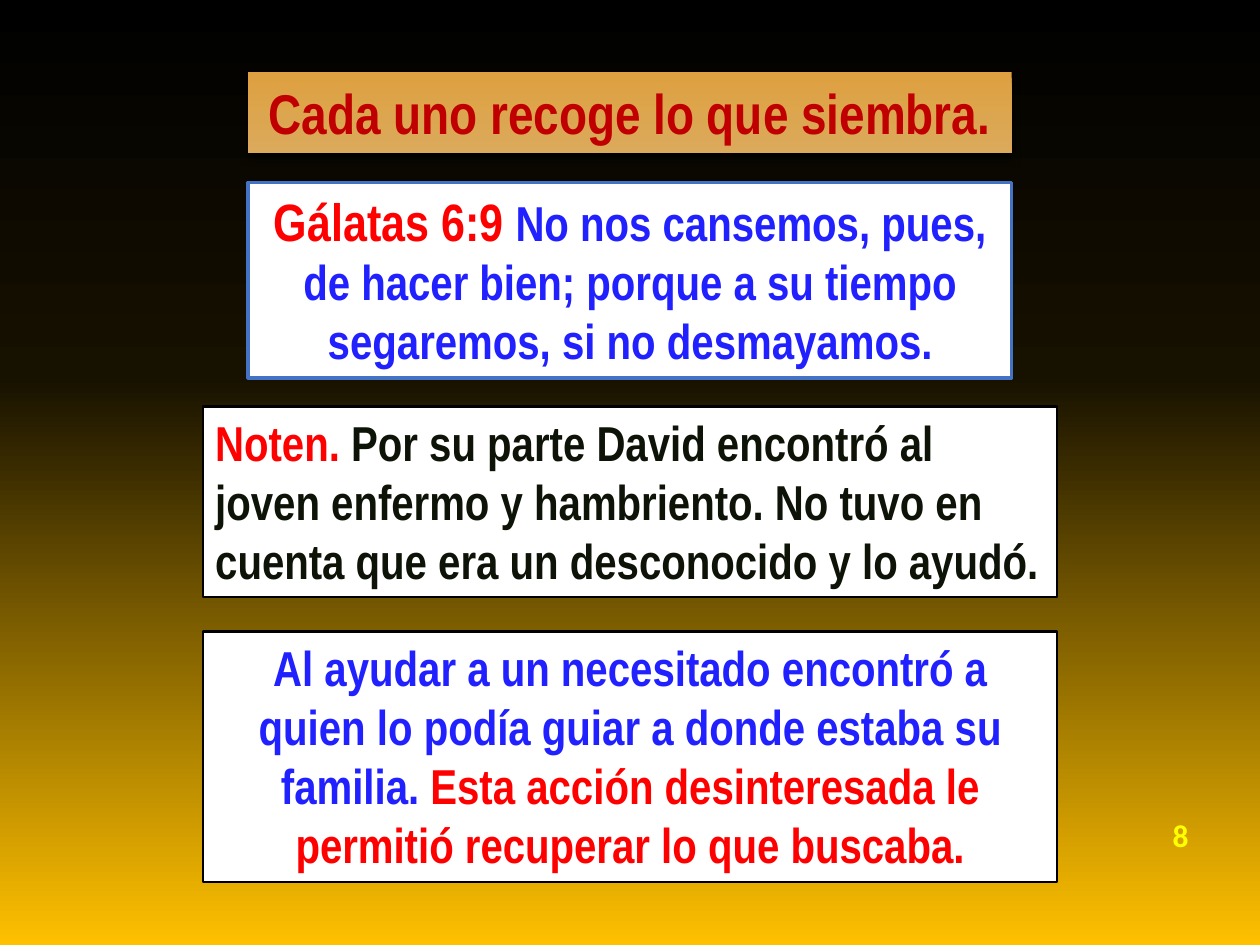
import copy
from dataclasses import dataclass

import pptx
import pptx.util
from lxml import etree
from pptx.dml.color import RGBColor
from pptx.enum.shapes import MSO_SHAPE
from pptx.enum.text import MSO_ANCHOR, MSO_AUTO_SIZE, PP_ALIGN
from pptx.oxml.ns import qn
from pptx.util import Cm, Pt


@dataclass(frozen=True)
class Theme:
    font: str = "Arial Narrow"
    number_font: str = "Calibri"
    title_size: int = 32
    verse_size: int = 30
    body_size: int = 28
    number_size: int = 18
    red: str = "FF0000"
    dark_red: str = "C00000"
    blue: str = "2121FF"
    ink: str = "0E1307"
    navy: str = "002060"
    yellow: str = "FFFF00"
    white: str = "FFFFFF"
    black: str = "000000"
    frame_blue: str = "4472C4"
    backdrop: tuple = ((0, "000000"), (0.4, "171100"), (1, "FFC000"))
    banner: tuple = ((0, "DEA040"), (1, "DBAA5B"))


THEME = Theme()
SLIDE_WIDTH, SLIDE_HEIGHT = 25.4, 19.05


def centred(top, width, height):
    """Box in cm, centred across the slide."""
    return (SLIDE_WIDTH - width) / 2, top, width, height


def add_solid(parent, colour):
    fill = etree.SubElement(parent, qn("a:solidFill"))
    return etree.SubElement(fill, qn("a:srgbClr"), val=colour)


def paint_gradient(fill, stops):
    """Gradient running from top to bottom."""
    fill.gradient()
    fill.gradient_angle = 270
    first = fill.gradient_stops[0]._gs
    for _ in range(len(stops) - len(fill.gradient_stops)):
        first.addnext(copy.deepcopy(first))
    for stop, (position, colour) in zip(fill.gradient_stops, stops):
        stop.position = position
        stop.color.rgb = RGBColor.from_string(colour)


def outline_text(span, colour, width):
    line = etree.Element(qn("a:ln"), w=str(Pt(width)))
    add_solid(line, colour)
    span.font._element.insert(0, line)


def write(frame, parts, size, font=THEME.font, align=PP_ALIGN.CENTER, outline=0.25):
    """Parts are (text, colour) pairs, optionally with own size and outline colour."""
    frame.word_wrap = True
    para = frame.paragraphs[0]
    para.alignment = align
    para.font.name = font
    para.font.bold = True
    para.font.size = Pt(size)
    for text, colour, *extra in parts:
        own_size, edge = extra or (size, colour)
        span = para.add_run()
        span.text = text
        span.font.name = font
        span.font.bold = True
        span.font.size = Pt(own_size)
        span.font.color.rgb = RGBColor.from_string(colour)
        outline_text(span, edge, outline)


def add_rectangle(page, box):
    shape = page.shapes.add_shape(MSO_SHAPE.RECTANGLE, *map(Cm, box))
    shape.shadow.inherit = False
    shape.text_frame.vertical_anchor = MSO_ANCHOR.TOP
    shape.text_frame.auto_size = MSO_AUTO_SIZE.SHAPE_TO_FIT_TEXT
    return shape


def add_title(page, box, text):
    banner = add_rectangle(page, box)
    paint_gradient(banner.fill, THEME.banner)
    banner.line.fill.background()
    # Soft shadow below the banner
    effects = banner._element.spPr.find(qn("a:effectLst"))
    shadow = etree.SubElement(effects, qn("a:outerShdw"), blurRad=str(Pt(5)),
                              dist=str(Pt(3)), dir="5400000", rotWithShape="0")
    tint = etree.SubElement(shadow, qn("a:srgbClr"), val=THEME.black)
    etree.SubElement(tint, qn("a:alpha"), val="65000")
    write(banner.text_frame, [(text, THEME.dark_red)], THEME.title_size, outline=0.75)


def add_panel(page, box, parts, frame_colour=THEME.black, frame_width=1.5,
              align=PP_ALIGN.CENTER):
    panel = add_rectangle(page, box)
    panel.fill.solid()
    panel.fill.fore_color.rgb = RGBColor.from_string(THEME.white)
    panel.line.color.rgb = RGBColor.from_string(frame_colour)
    panel.line.width = Pt(frame_width)
    write(panel.text_frame, parts, THEME.body_size, align=align)


def add_page_number(page, box, text):
    number = page.shapes.add_textbox(*map(Cm, box))
    number.text_frame.vertical_anchor = MSO_ANCHOR.MIDDLE
    write(number.text_frame, [(text, THEME.yellow)], THEME.number_size,
          font=THEME.number_font, align=PP_ALIGN.RIGHT, outline=0.75)


def main():
    deck = pptx.Presentation()
    deck.slide_width, deck.slide_height = Cm(SLIDE_WIDTH), Cm(SLIDE_HEIGHT)
    page = deck.slides.add_slide(deck.slide_layouts[6])
    paint_gradient(page.background.fill, THEME.backdrop)

    add_page_number(page, (23.04, 16.31, 1.17, 1.04), "8")
    add_title(page, centred(1.45, 15.39, 1.63), "Cada uno recoge lo que siembra.")

    # Comment on the story
    add_panel(page, centred(8.2, 17.22, 3.84), [
        ("Noten.", THEME.red),
        (" Por su parte David encontró al joven enfermo y hambriento. "
         "No tuvo en cuenta que era un desconocido y lo ayudó.",
         THEME.ink, THEME.body_size, THEME.navy),
    ], align=PP_ALIGN.LEFT)

    # Conclusion
    add_panel(page, centred(12.73, 17.22, 5.05), [
        ("Al ayudar a un necesitado encontró a quien lo podía guiar "
         "a donde estaba su familia. ", THEME.blue),
        ("Esta acción desinteresada le permitió recuperar lo que buscaba.", THEME.red),
    ])

    # Bible verse
    add_panel(page, centred(3.68, 15.39, 3.94), [
        ("Gálatas 6:9 ", THEME.red, THEME.verse_size, THEME.red),
        ("No nos cansemos, pues, de hacer bien; porque a su tiempo segaremos, "
         "si no desmayamos.", THEME.blue),
    ], frame_colour=THEME.frame_blue, frame_width=2)

    deck.save("out.pptx")


if __name__ == "__main__":
    main()
